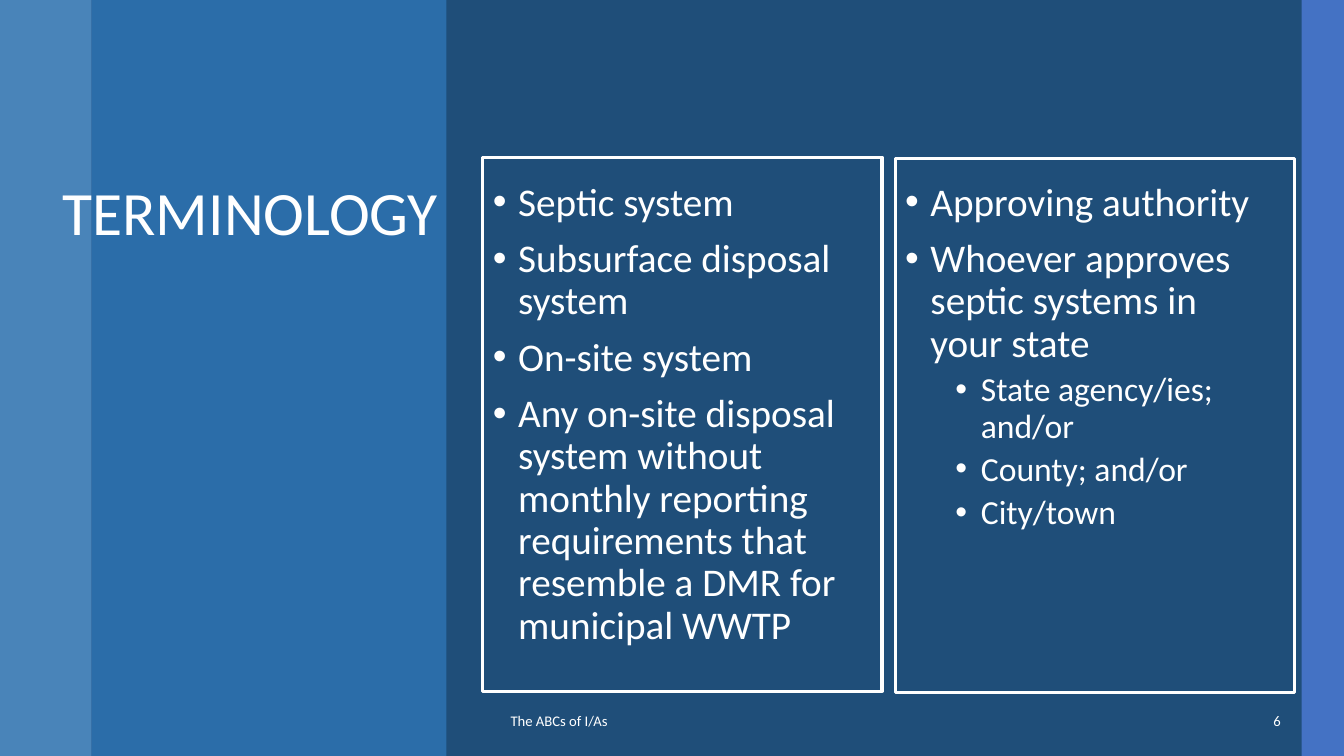
from dataclasses import dataclass

from lxml.etree import SubElement
from pptx import Presentation
from pptx.dml.color import RGBColor
from pptx.enum.shapes import MSO_SHAPE
from pptx.enum.text import MSO_ANCHOR, MSO_AUTO_SIZE, PP_ALIGN
from pptx.oxml.ns import qn
from pptx.slide import Slide
from pptx.text.text import TextFrame, _Paragraph
from pptx.util import Cm, Pt

COLORS = {
    "background": "1F4E79",
    "stripe": "4472C4",
    "light": "5B9BD5",
    "blue": "2E75B6",
    "white": "FFFFFF",
}
WIDTH, HEIGHT = 33.87, 19.05
TEXT_TOP, TEXT_HEIGHT = 4.47, 12.5
COLUMN_WIDTH = 9.5
FRAME_SIZE = (10.06, 13.46)
FOOTER_TOP, FOOTER_HEIGHT = 17.65, 1.02


@dataclass(frozen=True)
class Area:
    left: float
    top: float
    width: float
    height: float

    def lengths(self) -> tuple[Cm, Cm, Cm, Cm]:
        return Cm(self.left), Cm(self.top), Cm(self.width), Cm(self.height)


@dataclass(frozen=True)
class Panel:
    area: Area
    color: str
    opacity: int = 100


@dataclass(frozen=True)
class Bullet:
    text: str
    level: int = 0


@dataclass(frozen=True)
class Column:
    left: float
    frame_top: float
    bullets: tuple[Bullet, ...]


@dataclass(frozen=True)
class Footer:
    text: str
    left: float
    width: float
    align: PP_ALIGN


@dataclass(frozen=True)
class BulletStyle:
    size: float
    space_before: float
    margin: float


BULLET_STYLES = (BulletStyle(28, 10, 0.64), BulletStyle(24, 5, 1.91))
HANGING = 0.64

PANELS = (
    Panel(Area(32.8, 0, 1.07, HEIGHT), "stripe"),
    Panel(Area(0, 0, 2.31, HEIGHT), "light", 70),
    Panel(Area(2.31, 0, 8.94, HEIGHT), "blue", 80),
)
COLUMNS = (
    Column(12.17, 3.96, (
        Bullet("Septic system"),
        Bullet("Subsurface disposal system"),
        Bullet("On-site system"),
        Bullet("Any on-site disposal system without monthly reporting "
               "requirements that resemble a DMR for municipal WWTP"),
    )),
    Column(22.56, 3.99, (
        Bullet("Approving authority"),
        Bullet("Whoever approves septic systems in your state"),
        Bullet("State agency/ies; and/or", 1),
        Bullet("County; and/or", 1),
        Bullet("City/town", 1),
    )),
)
FOOTERS = (
    Footer("The ABCs of I/As", 12.62, 15.8, PP_ALIGN.LEFT),
    Footer("6", 28.75, 3.78, PP_ALIGN.RIGHT),
)


def rgb(name: str) -> RGBColor:
    """Return a named colour."""
    return RGBColor.from_string(COLORS[name])


def apply(target: object, values: dict[str, object]) -> None:
    """Set each attribute of the target from the format values."""
    for name, value in values.items():
        setattr(target, name, value)


def format_frame(frame: TextFrame, anchor: MSO_ANCHOR) -> None:
    """Wrap the text at a fixed size with the given anchor."""
    apply(frame, {
        "word_wrap": True,
        "auto_size": MSO_AUTO_SIZE.NONE,
        "vertical_anchor": anchor,
    })


def write(para: _Paragraph, text: str, size: float, values: dict[str, object]) -> None:
    """Fill a paragraph with white text."""
    apply(para, values)
    span = para.add_run()
    span.text = text
    apply(span.font, {"name": "Calibri", "size": Pt(size)})
    span.font.color.rgb = rgb("white")


def add_panel(page: Slide, panel: Panel) -> None:
    """Draw a plain vertical panel."""
    box = page.shapes.add_shape(MSO_SHAPE.RECTANGLE, *panel.area.lengths())
    box.shadow.inherit = False
    box.fill.solid()
    box.fill.fore_color.rgb = rgb(panel.color)
    box.line.fill.background()
    if panel.opacity < 100:
        color = box.fill._xPr.find(qn("a:solidFill"))[0]
        SubElement(color, qn("a:alpha"), val=str(panel.opacity * 1000))


def add_title(page: Slide, text: str) -> None:
    """Place and format the title."""
    title = page.shapes.title
    apply(title, dict(zip(
        ("left", "top", "width", "height"),
        Area(1.17, TEXT_TOP, 10.13, TEXT_HEIGHT).lengths(),
    )))
    format_frame(title.text_frame, MSO_ANCHOR.TOP)
    write(title.text_frame.paragraphs[0], text, 44,
          {"alignment": PP_ALIGN.RIGHT, "line_spacing": 0.9})


def add_column(page: Slide, column: Column) -> None:
    """Write one column of bullets."""
    area = Area(column.left, TEXT_TOP, COLUMN_WIDTH, TEXT_HEIGHT)
    frame = page.shapes.add_textbox(*area.lengths()).text_frame
    format_frame(frame, MSO_ANCHOR.TOP)
    for index, bullet in enumerate(column.bullets):
        para = frame.add_paragraph() if index else frame.paragraphs[0]
        style = BULLET_STYLES[bullet.level]
        properties = para._p.get_or_add_pPr()
        properties.set("marL", str(Cm(style.margin)))
        properties.set("indent", str(-Cm(HANGING)))
        SubElement(properties, qn("a:buFont"), typeface="Arial")
        SubElement(properties, qn("a:buChar"), char="•")
        write(para, bullet.text, style.size, {
            "level": bullet.level,
            "line_spacing": 0.9,
            "space_before": Pt(style.space_before if index else 0),
        })


def add_footer(page: Slide, footer: Footer) -> None:
    """Write one footer text."""
    area = Area(footer.left, FOOTER_TOP, footer.width, FOOTER_HEIGHT)
    frame = page.shapes.add_textbox(*area.lengths()).text_frame
    format_frame(frame, MSO_ANCHOR.MIDDLE)
    write(frame.paragraphs[0], footer.text, 10.5,
          {"alignment": footer.align, "space_after": Pt(6)})


def add_outline(page: Slide, column: Column) -> None:
    """Draw the white outline around a column."""
    area = Area(column.left, column.frame_top, *FRAME_SIZE)
    box = page.shapes.add_shape(MSO_SHAPE.RECTANGLE, *area.lengths())
    box.shadow.inherit = False
    box.fill.background()
    box.line.color.rgb = rgb("white")
    box.line.width = Pt(2.25)


def main() -> None:
    """Build the terminology slide."""
    deck = Presentation()
    apply(deck, {"slide_width": Cm(WIDTH), "slide_height": Cm(HEIGHT)})
    page = deck.slides.add_slide(deck.slide_layouts.get_by_name("Title Only"))
    page.background.fill.solid()
    page.background.fill.fore_color.rgb = rgb("background")
    for panel in PANELS:
        add_panel(page, panel)
    add_title(page, "TERMINOLOGY")
    page.shapes._spTree.append(page.shapes.title._element)
    for column in COLUMNS:
        add_column(page, column)
    for footer in FOOTERS:
        add_footer(page, footer)
    for column in COLUMNS:
        add_outline(page, column)
    deck.save("out.pptx")


if __name__ == "__main__":
    main()
